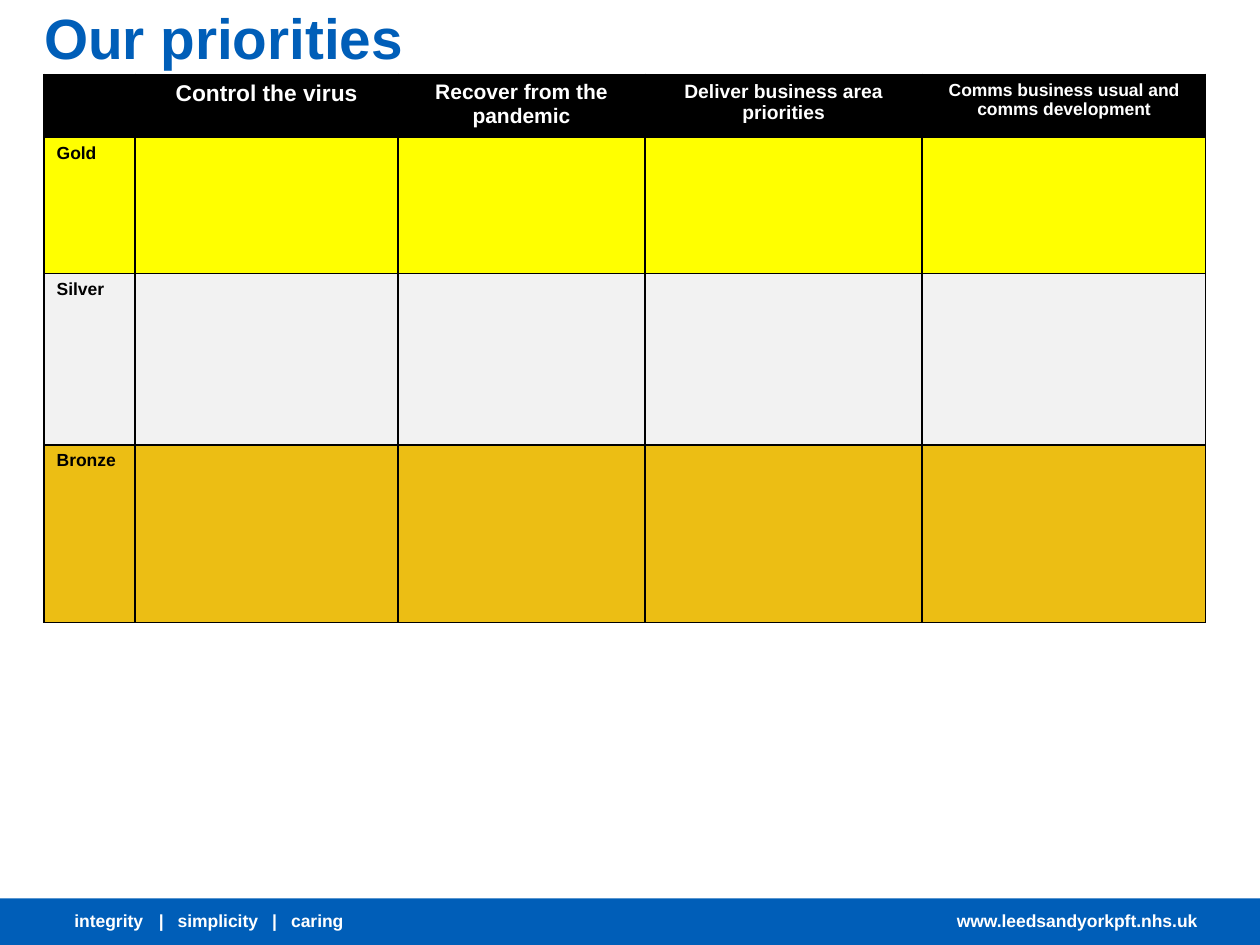
from lxml import etree
from pptx import Presentation
from pptx.dml.color import RGBColor
from pptx.enum.shapes import MSO_SHAPE
from pptx.enum.text import MSO_ANCHOR, PP_ALIGN
from pptx.oxml.ns import qn
from pptx.util import Inches, Pt

RECTANGLE = MSO_SHAPE.RECTANGLE
TOP = MSO_ANCHOR.TOP
LEFT, CENTER, RIGHT = PP_ALIGN.LEFT, PP_ALIGN.CENTER, PP_ALIGN.RIGHT

COLORS = {
    "blue": "005EB8",
    "white": "FFFFFF",
    "black": "000000",
    "gold": "FFFF00",
    "silver": "F2F2F2",
    "bronze": "ECBE14",
}
COLUMN_WIDTHS = [0.72, 2.09, 1.96, 2.2, 2.25]
HEADINGS = [
    ("Control the virus", 13),
    ("Recover from the pandemic", 12),
    ("Deliver business area priorities", 11),
    ("Comms business usual and comms development", 10),
]
TIERS = [("Gold", 1.08), ("Silver", 1.36), ("Bronze", 1.41)]
HEADER_HEIGHT = 0.48
VALUE_TABS = [0.67, 0.82, 1.57, 1.72]


def rgb(name):
    """Return the named colour."""
    return RGBColor.from_string(COLORS[name])


def write_text(text_frame, text, size, color, align=LEFT):
    """Write one bold Arial run into the first paragraph."""
    paragraph = text_frame.paragraphs[0]
    paragraph.alignment = align
    run = paragraph.add_run()
    run.text = text
    run.font.name = "Arial"
    run.font.size = Pt(size)
    run.font.bold = True
    run.font.color.rgb = rgb(color)


def add_text(slide, box, text, size, color, align=LEFT, left_inset=0):
    """Add a text box and return its paragraph."""
    shape = slide.shapes.add_textbox(*map(Inches, box))
    text_frame = shape.text_frame
    text_frame.word_wrap = True
    text_frame.vertical_anchor = TOP
    text_frame.margin_left = Inches(left_inset)
    write_text(text_frame, text, size, color, align)
    return text_frame.paragraphs[0]


def add_tab_stops(paragraph, positions):
    """Give a paragraph left tab stops at the positions in inches."""
    properties = paragraph._p.get_or_add_pPr()
    tab_list = etree.SubElement(properties, qn("a:tabLst"))
    for position in positions:
        etree.SubElement(tab_list, qn("a:tab"), pos=str(Inches(position)), algn="l")


def style_cell(cell, fill):
    """Fill a cell and draw its four thin black borders."""
    properties = cell._tc.get_or_add_tcPr()
    for side in ("a:lnL", "a:lnR", "a:lnT", "a:lnB"):
        line = etree.SubElement(properties, qn(side), w=str(Pt(1)))
        solid = etree.SubElement(line, qn("a:solidFill"))
        etree.SubElement(solid, qn("a:srgbClr"), val=COLORS["black"])
    cell.fill.solid()
    cell.fill.fore_color.rgb = rgb(fill)


def add_priorities_table(slide, left, top):
    """Add the grid of priorities by tier."""
    heights = [HEADER_HEIGHT] + [height for _, height in TIERS]
    frame = slide.shapes.add_table(
        len(heights), len(COLUMN_WIDTHS), Inches(left), Inches(top),
        Inches(sum(COLUMN_WIDTHS)), Inches(sum(heights)),
    )
    table = frame.table
    for column, width in zip(table.columns, COLUMN_WIDTHS):
        column.width = Inches(width)
    fills = ["black"] + [name.lower() for name, _ in TIERS]
    for row, height, fill in zip(table.rows, heights, fills):
        row.height = Inches(height)
        for cell in row.cells:
            style_cell(cell, fill)
    for index, (heading, size) in enumerate(HEADINGS, 1):
        write_text(table.cell(0, index).text_frame, heading, size, "white", CENTER)
    for index, (name, _) in enumerate(TIERS, 1):
        write_text(table.cell(index, 0).text_frame, name, 10, "black")


def add_footer(slide, left, top, width, height):
    """Add the blue band with the values and the web address."""
    band = slide.shapes.add_shape(RECTANGLE, *map(Inches, (left, top, width, height)))
    band.shadow.inherit = False
    band.fill.solid()
    band.fill.fore_color.rgb = rgb("blue")
    band.line.fill.background()
    text_top = top + 0.04
    values = add_text(
        slide, (left + 0.59, text_top, 2.91, 0.27),
        "integrity\t|\tsimplicity\t|\tcaring", 10, "white",
    )
    add_tab_stops(values, VALUE_TABS)
    add_text(
        slide, (left + 6.69, text_top, 2.91, 0.27),
        "www.leedsandyorkpft.nhs.uk", 10, "white", RIGHT, 0.1,
    )


def main():
    """Build and save the slide."""
    presentation = Presentation()
    presentation.slide_width = Inches(10)
    presentation.slide_height = Inches(7.5)
    slide = presentation.slides.add_slide(presentation.slide_layouts[6])
    add_footer(slide, 0, 7.13, 10, 0.39)
    add_text(slide, (0.35, -0.03, 8.5, 0.62), "Our priorities", 32.4, "blue")
    add_priorities_table(slide, 0.35, 0.59)
    presentation.save("out.pptx")


if __name__ == "__main__":
    main()
